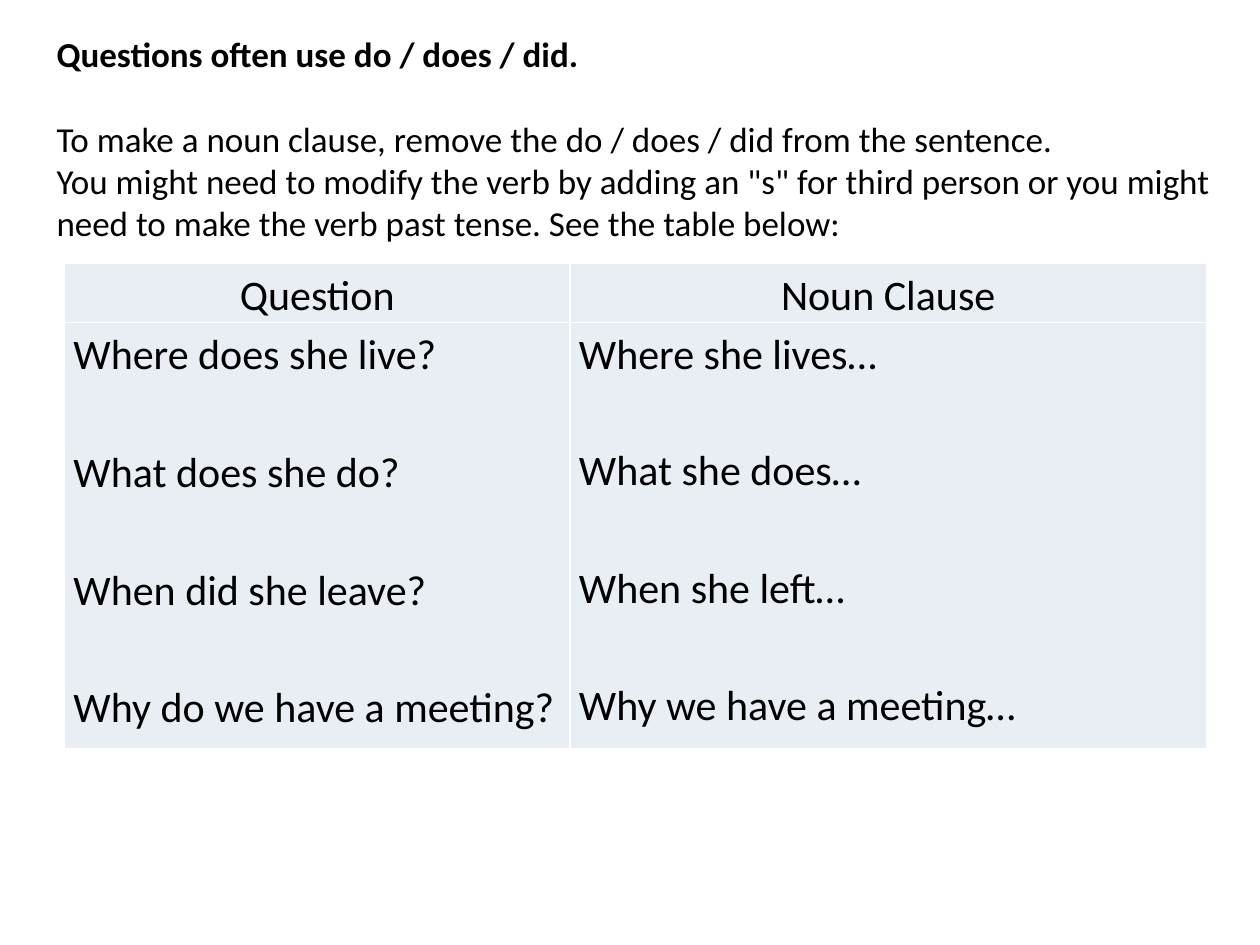
from dataclasses import dataclass

from lxml.etree import SubElement
from pptx import Presentation
from pptx.dml.color import RGBColor
from pptx.enum.text import MSO_AUTO_SIZE as AutoSize, PP_ALIGN as Align
from pptx.oxml.ns import qn
from pptx.util import Cm, Pt

BLACK = RGBColor(0x00, 0x00, 0x00)
WHITE = RGBColor(0xFF, 0xFF, 0xFF)
PALE_BLUE = RGBColor(0xE9, 0xED, 0xF4)
FONT = "Calibri"


@dataclass
class Para:
    text: str
    size: float = 24
    bold: bool = False
    before: float = 0
    spacing: float = 1.15
    align: Align = Align.LEFT


INTRO = [
    Para("Questions often use do / does / did.", 20, True, spacing=1),
    Para("To make a noun clause, remove the do / does / did from the sentence.",
         20, before=24.4, spacing=1),
    Para('You might need to modify the verb by adding an "s" for third person '
         "or you might need to make the verb past tense. See the table below:",
         20, spacing=1),
]
HEADERS = ["Question", "Noun Clause"]
EXAMPLES = [
    ("Where does she live?", "Where she lives…"),
    ("What does she do?", "What she does…"),
    ("When did she leave?", "When she left…"),
    ("Why do we have a meeting?", "Why we have a meeting…"),
]
GAPS = [(0, 0), (33.6, 32.4), (33.6, 33.6), (33.6, 33.6)]
COL_WIDTHS = [Cm(10.19), Cm(12.83)]
ROW_HEIGHTS = [Cm(1.02), Cm(8.59)]


def write(tf, paras: list[Para]) -> None:
    for i, para in enumerate(paras):
        p = tf.paragraphs[0] if i == 0 else tf.add_paragraph()
        p.alignment = para.align
        p.line_spacing = para.spacing
        if para.before:
            p.space_before = Pt(para.before)
        r = p.add_run()
        r.text = para.text
        r.font.name = FONT
        r.font.size = Pt(para.size)
        r.font.bold = para.bold
        r.font.color.rgb = BLACK


def style_cell(cell) -> None:
    cell.margin_left = cell.margin_right = Cm(0.18)
    cell.margin_top = cell.margin_bottom = 0
    tc_pr = cell._tc.get_or_add_tcPr()
    for side in ("lnL", "lnR", "lnT", "lnB"):
        ln = SubElement(tc_pr, qn(f"a:{side}"), w=str(Pt(1)))
        fill = SubElement(ln, qn("a:solidFill"))
        SubElement(fill, qn("a:srgbClr"), val=str(WHITE))
    cell.fill.solid()
    cell.fill.fore_color.rgb = PALE_BLUE


def add_clause_table(s) -> None:
    frame = s.shapes.add_table(2, 2, Cm(1.3), Cm(5.31),
                               sum(COL_WIDTHS), sum(ROW_HEIGHTS))
    table = frame.table
    table.first_row = table.horz_banding = False
    for row, height in zip(table.rows, ROW_HEIGHTS):
        row.height = height
    for c, width in enumerate(COL_WIDTHS):
        table.columns[c].width = width
        header = [Para(HEADERS[c], align=Align.CENTER)]
        body = [Para(pair[c], before=gap[c]) for pair, gap in zip(EXAMPLES, GAPS)]
        for row, paras in enumerate((header, body)):
            cell = table.cell(row, c)
            style_cell(cell)
            write(cell.text_frame, paras)


def add_intro(s) -> None:
    sp = s.shapes.add_textbox(Cm(0.89), Cm(0.53), Cm(23.8), Cm(4.52))
    tf = sp.text_frame
    tf.word_wrap = True
    tf.auto_size = AutoSize.SHAPE_TO_FIT_TEXT
    write(tf, INTRO)


def main() -> None:
    """Build the slide on turning questions into noun clauses."""
    prs = Presentation()
    prs.slide_width, prs.slide_height = Cm(25.4), Cm(19.05)
    s = prs.slides.add_slide(prs.slide_layouts[6])
    add_clause_table(s)
    add_intro(s)
    prs.save("out.pptx")


if __name__ == "__main__":
    main()
